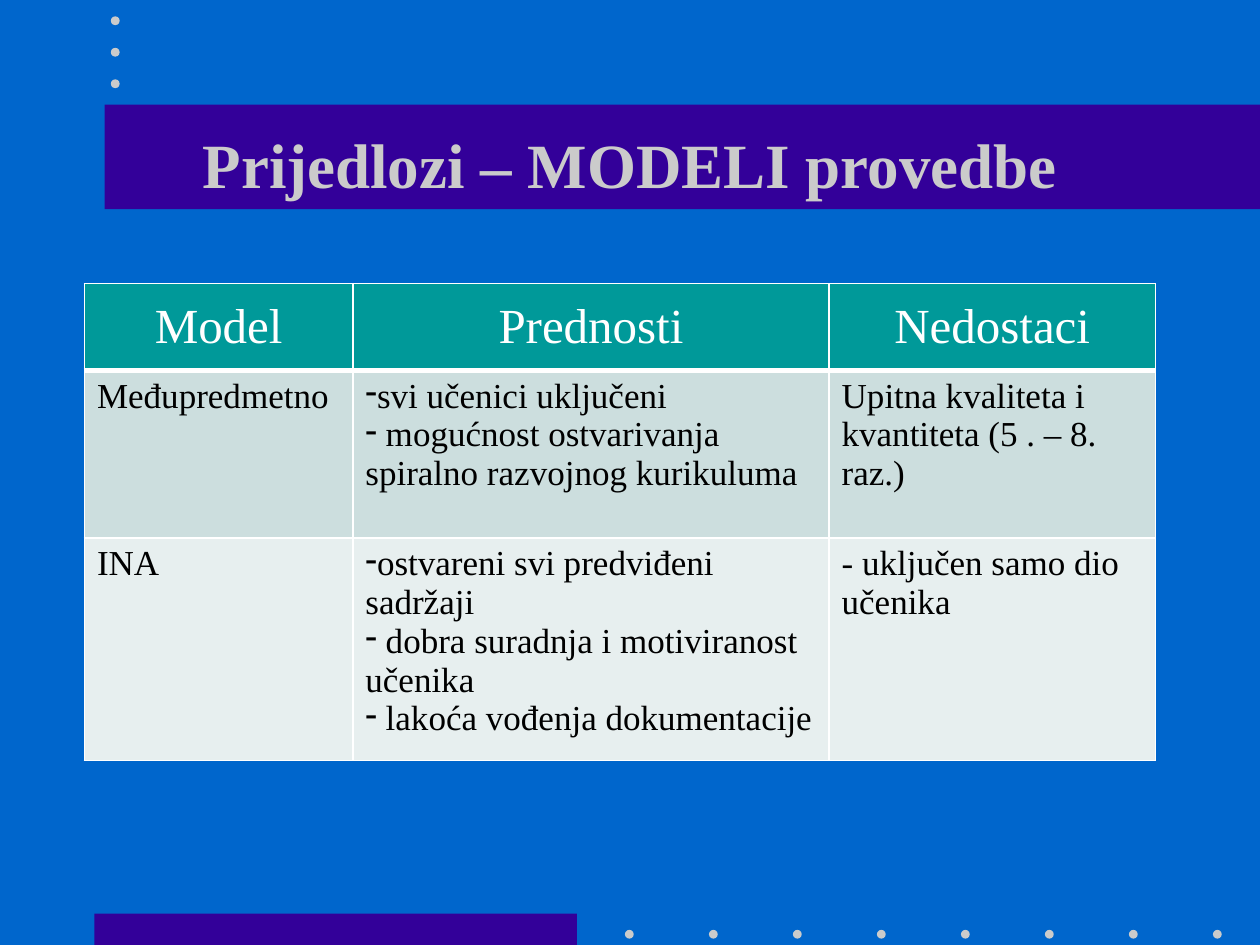
import pptx
import pptx.dml.color
import pptx.enum.shapes
import pptx.enum.text
import pptx.oxml
import pptx.oxml.ns
import pptx.util
from pptx.util import Inches

ALIGN = pptx.enum.text.PP_ALIGN
ANCHOR = pptx.enum.text.MSO_ANCHOR
SHAPE = pptx.enum.shapes.MSO_SHAPE

COLUMN_WIDTHS = [2.13, 3.78, 2.59]
ROW_HEIGHTS = [0.69, 1.33, 1.65]
HEADERS = ["Model", "Prednosti", "Nedostaci"]
# A list holds bulleted paragraphs.
MODELS = [
    ["Međupredmetno",
     ["svi učenici uključeni",
      " mogućnost ostvarivanja spiralno razvojnog kurikuluma"],
     "Upitna kvaliteta i kvantiteta (5 . – 8. raz.)"],
    ["INA",
     ["ostvareni svi predviđeni sadržaji",
      " dobra suradnja i motiviranost učenika",
      " lakoća vođenja dokumentacije"],
     "- uključen samo dio učenika"],
]


def color(hex_string):
    return pptx.dml.color.RGBColor.from_string(hex_string)


class SlideBuilder:
    FONT = "Times New Roman"
    BACKGROUND = "0066CC"
    BAR = "330099"
    DOT = "CBCBCB"
    WHITE = "FFFFFF"
    HEADER = "009999"
    BODY_FILLS = ["CCDEDE", "E7EFEF"]

    def __init__(self, slide):
        self.slide = slide
        fill = slide.background.fill
        fill.solid()
        fill.fore_color.rgb = color(self.BACKGROUND)

    def shape(self, kind, left, top, width, height, fill):
        shape = self.slide.shapes.add_shape(
            kind, Inches(left), Inches(top), Inches(width), Inches(height))
        shape.shadow.inherit = False
        shape.fill.solid()
        shape.fill.fore_color.rgb = color(fill)
        shape.line.fill.background()

    def bar(self, left, top, width, height):
        self.shape(SHAPE.RECTANGLE, left, top, width, height, self.BAR)

    def dot(self, left, top):
        self.shape(SHAPE.OVAL, left, top, 0.07, 0.07, self.DOT)

    def style(self, paragraph, size, text_color, bold=False, align=ALIGN.LEFT):
        paragraph.alignment = align
        font = paragraph.font
        font.name = self.FONT
        font.size = pptx.util.Pt(size)
        font.bold = bold
        font.color.rgb = color(text_color)

    def title(self, text, left, top, width, height):
        box = self.slide.shapes.add_textbox(
            Inches(left), Inches(top), Inches(width), Inches(height))
        frame = box.text_frame
        frame.word_wrap = True
        frame.vertical_anchor = ANCHOR.MIDDLE
        frame.text = text
        self.style(frame.paragraphs[0], 36, self.DOT, True, ALIGN.CENTER)

    def bullet(self, paragraph):
        """Put a dash before the paragraph, without an indent."""
        properties = paragraph._p.get_or_add_pPr()
        properties.set("marL", "0")
        properties.set("indent", "0")
        properties.append(pptx.oxml.parse_xml(
            f'<a:buChar {pptx.oxml.ns.nsdecls("a")} char="-"/>'))

    def borders(self, cell, widths):
        """Draw the cell's borders; widths maps each side to points."""
        properties = cell._tc.get_or_add_tcPr()
        for side, width in widths.items():
            properties.append(pptx.oxml.parse_xml(
                f'<a:ln{side} {pptx.oxml.ns.nsdecls("a")} w="{pptx.util.Pt(width)}">'
                f'<a:solidFill><a:srgbClr val="{self.WHITE}"/></a:solidFill>'
                f'</a:ln{side}>'))

    def cell(self, cell, content, is_header, fill, widths):
        self.borders(cell, widths)
        cell.fill.solid()
        cell.fill.fore_color.rgb = color(fill)
        cell.vertical_anchor = ANCHOR.MIDDLE if is_header else ANCHOR.TOP
        bulleted = isinstance(content, list)
        cell.text = "\n".join(content) if bulleted else content
        for paragraph in cell.text_frame.paragraphs:
            if is_header:
                self.style(paragraph, 28, self.WHITE, align=ALIGN.CENTER)
            else:
                self.style(paragraph, 20, "000000")
            if bulleted:
                self.bullet(paragraph)

    def table(self, left, top, rows):
        table = self.slide.shapes.add_table(
            len(rows), len(COLUMN_WIDTHS), Inches(left), Inches(top),
            Inches(sum(COLUMN_WIDTHS)), Inches(sum(ROW_HEIGHTS))).table
        for column, width in zip(table.columns, COLUMN_WIDTHS):
            column.width = Inches(width)
        for row, height in zip(table.rows, ROW_HEIGHTS):
            row.height = Inches(height)
        fills = [self.HEADER] + self.BODY_FILLS
        for row_index, contents in enumerate(rows):
            widths = {"L": 1, "R": 1, "T": 3 if row_index == 1 else 1,
                      "B": 3 if row_index == 0 else 1}
            for column_index, content in enumerate(contents):
                self.cell(table.cell(row_index, column_index), content,
                          row_index == 0, fills[row_index], widths)


def main():
    presentation = pptx.Presentation()
    presentation.slide_width = Inches(10)
    presentation.slide_height = Inches(7.5)
    builder = SlideBuilder(
        presentation.slides.add_slide(presentation.slide_layouts[6]))

    builder.bar(0.75, 7.25, 3.83, 0.25)
    for index in range(8):
        builder.dot(4.96 + index * 2 / 3, 7.38)
    builder.bar(0.83, 0.83, 9.17, 0.83)
    for index in range(3):
        builder.dot(0.88, 0.13 + index * 0.25)

    builder.title("Prijedlozi – MODELI provedbe", 0.75, 0.67, 8.5, 1.25)
    builder.table(0.67, 2.25, [HEADERS] + MODELS)
    presentation.save("out.pptx")


if __name__ == "__main__":
    main()
